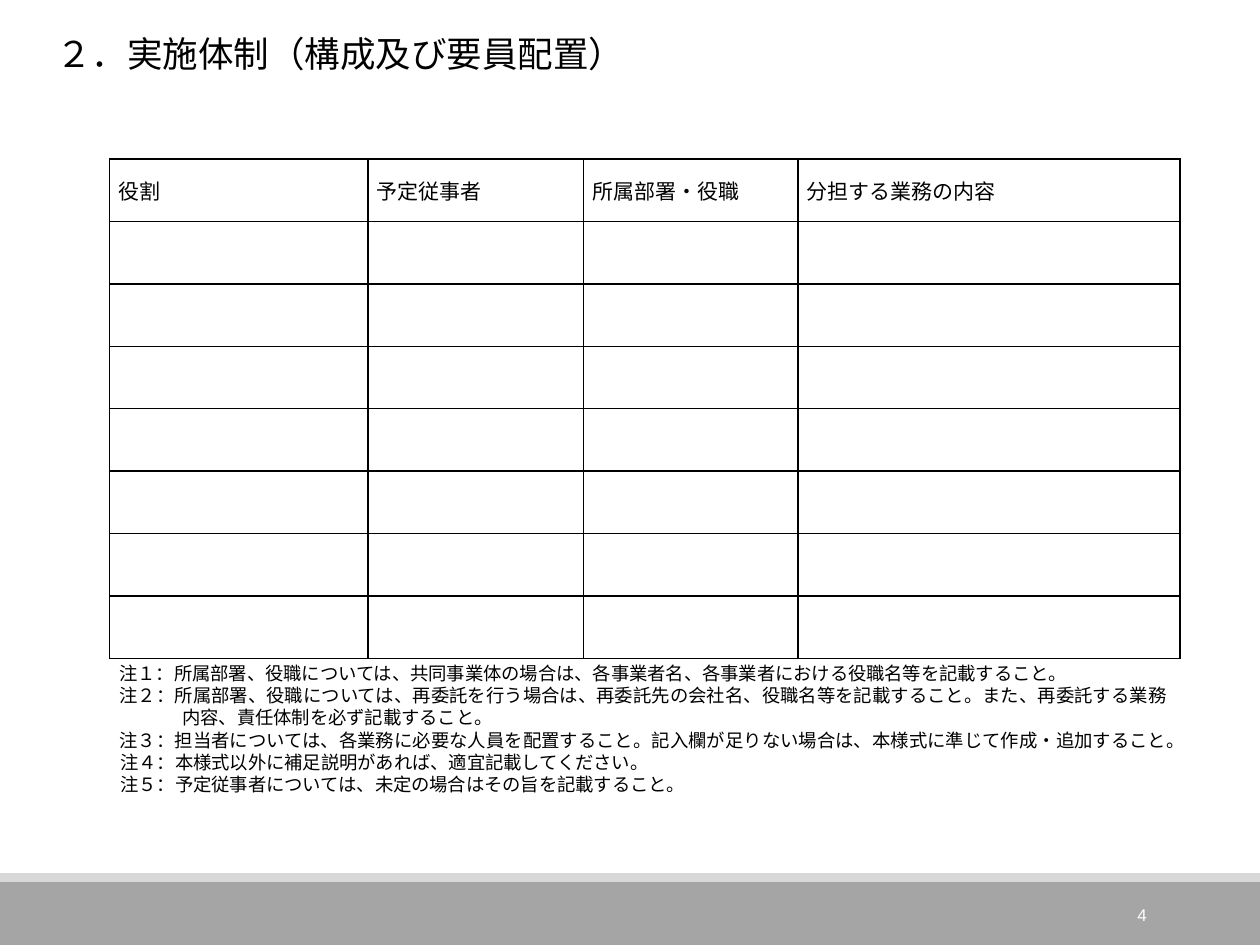
from lxml import etree
from pptx import Presentation
from pptx.dml.color import RGBColor
from pptx.enum import shapes, text
from pptx.oxml import ns
from pptx.util import Pt

BLACK = RGBColor(0, 0, 0)
WHITE = RGBColor(255, 255, 255)
GRAY = RGBColor(0xA5, 0xA5, 0xA5)
PALE = RGBColor(0xD8, 0xD8, 0xD8)
GOTHIC = "Noto Sans CJK JP"
LEFT, RIGHT, JUST = text.PP_ALIGN.LEFT, text.PP_ALIGN.RIGHT, text.PP_ALIGN.JUSTIFY
MIDDLE, TOP = text.MSO_ANCHOR.MIDDLE, text.MSO_ANCHOR.TOP

TITLE = "２．実施体制（構成及び要員配置）"
HEADS = [("役割", 147.6), ("予定従事者", 123.3), ("所属部署・役職", 122.4), ("分担する業務の内容", 218.3)]
ROWS, ROW_H = 8, 35.67
WIDE, SLIM = (59.8, -36), (32.4, -8)
NOTES = [
    ("注１：所属部署、役職については、共同事業体の場合は、各事業者名、各事業者における役職名等を記載すること。", WIDE),
    ("注２：所属部署、役職については、再委託を行う場合は、再委託先の会社名、役職名等を記載すること。"
     "また、再委託する業務内容、責任体制を必ず記載すること。", WIDE),
    ("注３：担当者については、各業務に必要な人員を配置すること。"
     "記入欄が足りない場合は、本様式に準じて作成・追加すること。", WIDE),
    ("注４：本様式以外に補足説明があれば、適宜記載してください。", SLIM),
    ("注５：予定従事者については、未定の場合はその旨を記載すること。", SLIM),
]
BANDS = [((0, 504, 720, 36), GRAY), ((0, 499, 720, 5), PALE)]
CELL = dict(margin_left=Pt(5), margin_right=Pt(5), margin_top=0, margin_bottom=0, vertical_anchor=MIDDLE)


def apply(obj, form):
    for key, val in form.items():
        setattr(obj, key, val)


def write(para, words, size, align=LEFT, face=GOTHIC, color=BLACK):
    para.alignment = align
    run = para.add_run()
    run.text = words
    apply(run.font, dict(size=Pt(size), name=face))
    run.font.color.rgb = color
    etree.SubElement(run.font._element, ns.qn("a:ea"), typeface=face)


def add_box(slide, place, anchor):
    frame = slide.shapes.add_textbox(*map(Pt, place)).text_frame
    apply(frame, dict(word_wrap=True, vertical_anchor=anchor))
    return frame


def add_edges(cell):
    props = cell._tc.get_or_add_tcPr()
    for spot, side in enumerate(("lnL", "lnR", "lnT", "lnB")):
        line = etree.Element(ns.qn("a:" + side), w=str(Pt(1)))
        fill = etree.SubElement(line, ns.qn("a:solidFill"))
        etree.SubElement(fill, ns.qn("a:srgbClr"), val=str(BLACK))
        props.insert(spot, line)


def add_grid(slide):
    width = sum(wide for _, wide in HEADS)
    grid = slide.shapes.add_table(ROWS, len(HEADS), Pt(62.6), Pt(90.9), Pt(width), Pt(ROWS * ROW_H)).table
    apply(grid, dict(first_row=False, horz_banding=False))
    for row in grid.rows:
        row.height = Pt(ROW_H)
    for col, (_, wide) in zip(grid.columns, HEADS):
        col.width = Pt(wide)
    for cell in grid.iter_cells():
        apply(cell, CELL)
        cell.fill.background()
        add_edges(cell)
        cell.text_frame.paragraphs[0].font.size = Pt(12)
    for cell, (head, _) in zip(grid.rows[0].cells, HEADS):
        write(cell.text_frame.paragraphs[0], head, 12, JUST)


def add_notes(slide):
    frame = add_box(slide, (37.4, 375.1, 637.2, 96.5), TOP)
    for num, (note, (left, hang)) in enumerate(NOTES):
        para = frame.add_paragraph() if num else frame.paragraphs[0]
        write(para, note, 10.5, JUST)
        props = para._p.get_or_add_pPr()
        props.set("marL", str(Pt(left)))
        props.set("indent", str(Pt(hang)))


def main():
    deck = Presentation()
    apply(deck, dict(slide_width=Pt(720), slide_height=Pt(540)))
    slide = deck.slides.add_slide(deck.slide_layouts[6])
    for place, color in BANDS:
        band = slide.shapes.add_shape(shapes.MSO_SHAPE.RECTANGLE, *map(Pt, place))
        band.shadow.inherit = False
        band.fill.solid()
        band.fill.fore_color.rgb = color
        band.line.fill.background()
    page = add_box(slide, (584.6, 508.3, 77.8, 28.8), MIDDLE)
    write(page.paragraphs[0], "4", 9.7, RIGHT, "Arial", WHITE)
    head = add_box(slide, (25.2, 14.4, 586.8, 31.7), MIDDLE)
    write(head.paragraphs[0], TITLE, 20.3)
    add_grid(slide)
    add_notes(slide)
    deck.save("out.pptx")


if __name__ == "__main__":
    main()
